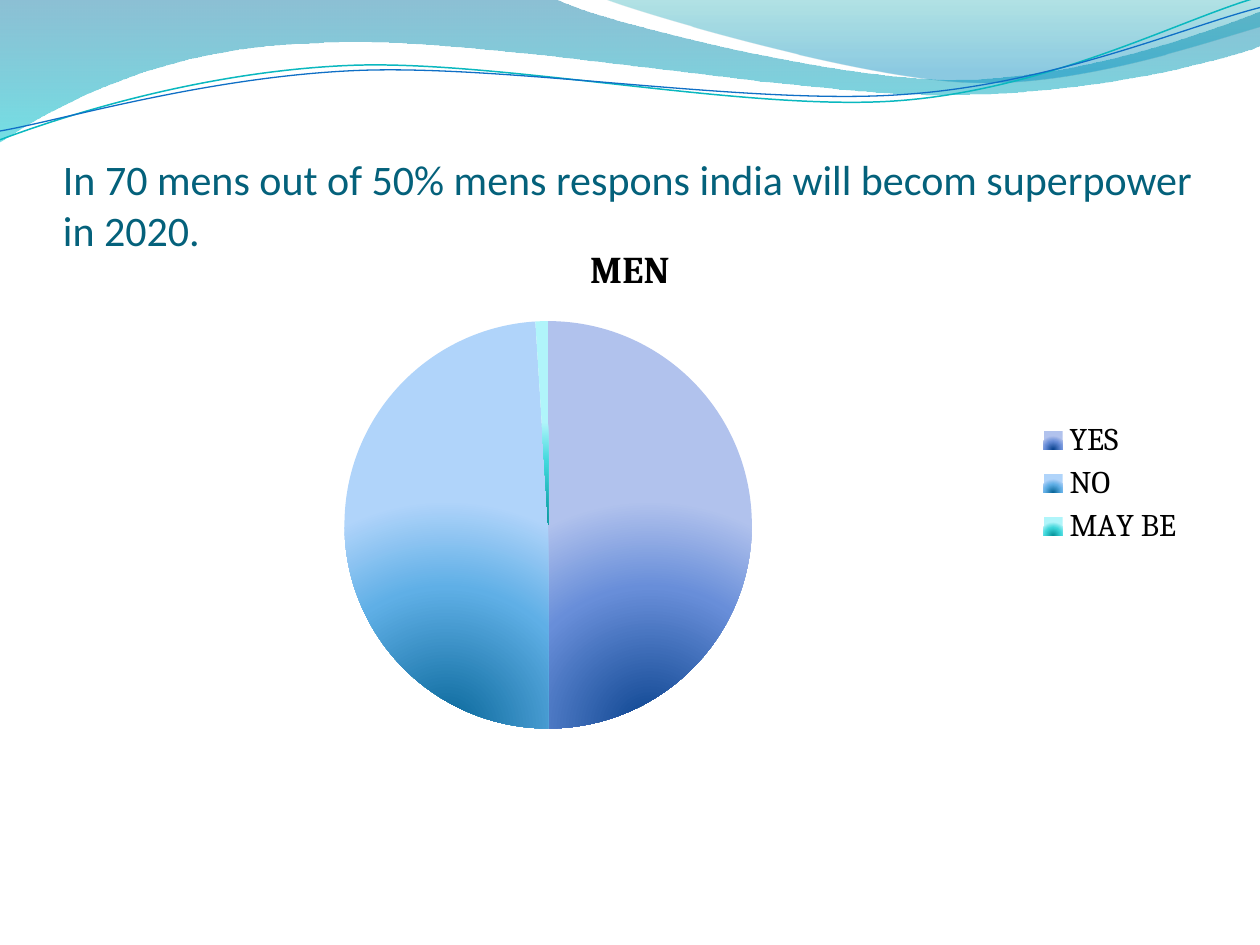
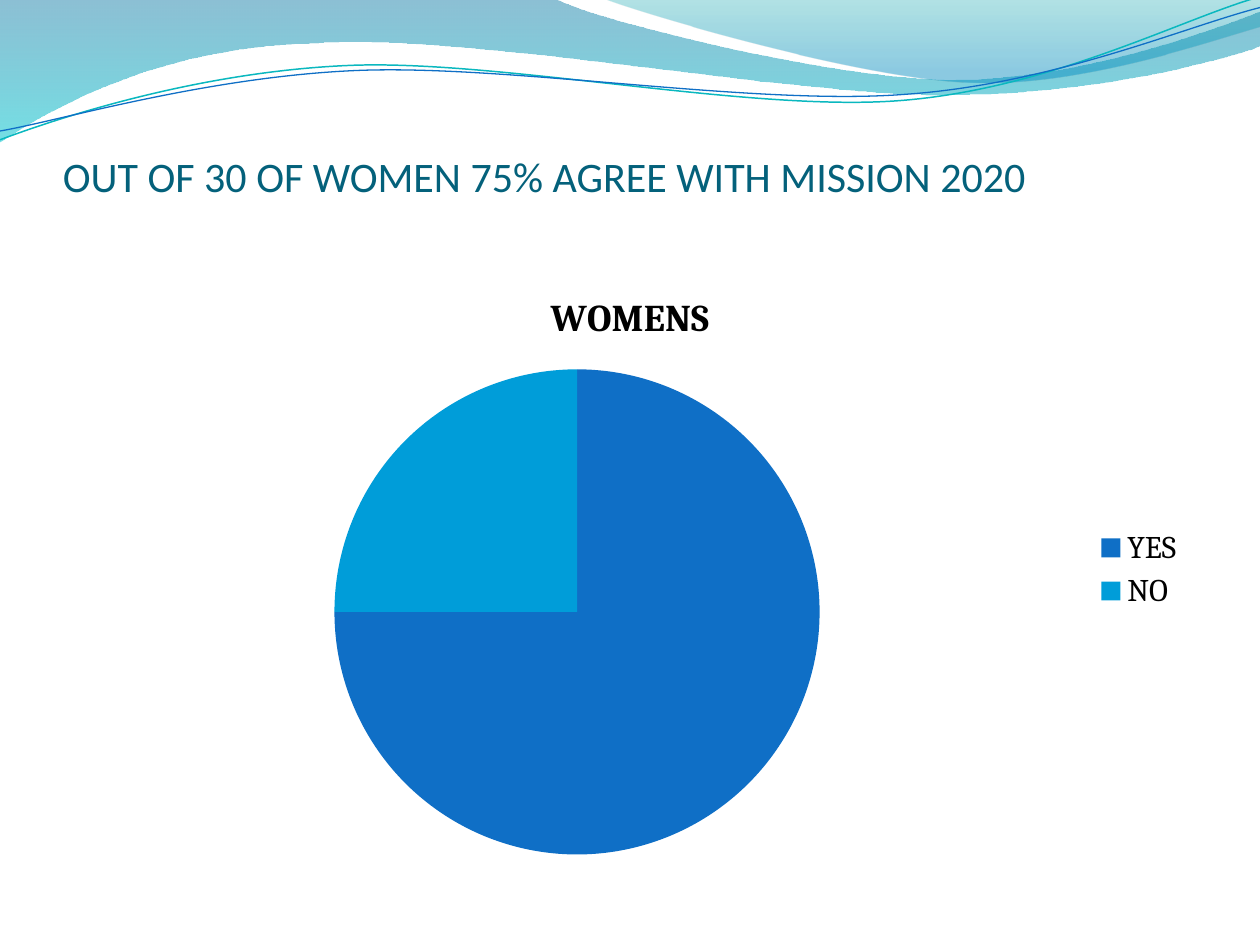
import pptx
import pptx.chart.data
import pptx.dml.color
import pptx.enum.chart
import pptx.enum.text
import pptx.oxml
import pptx.oxml.ns
import pptx.util
from lxml import etree

Inches = pptx.util.Inches
Pt = pptx.util.Pt
RGBColor = pptx.dml.color.RGBColor
qn = pptx.oxml.ns.qn

BLACK = RGBColor(0x00, 0x00, 0x00)
TITLE = RGBColor(0x04, 0x61, 0x7B)
BLUE = RGBColor(0x0F, 0x6F, 0xC6)
SKY = RGBColor(0x00, 0x9D, 0xD9)
TEAL_LINE = RGBColor(0x0A, 0xB8, 0xBF)
WAVE_TOP = RGBColor(0x00, 0x74, 0xA1)
WAVE_BOTTOM = RGBColor(0x00, 0xC6, 0xCF)
CREST_TOP = RGBColor(0x00, 0xA1, 0xA9)
CREST_BOTTOM = RGBColor(0x00, 0x8B, 0xBF)

# Slice shades from the glow centre outwards
BLUE_GLOW = (RGBColor(0x0A, 0x43, 0x8E), RGBColor(0x68, 0x8E, 0xD9), RGBColor(0xB1, 0xC2, 0xED))
SKY_GLOW = (RGBColor(0x08, 0x66, 0x99), RGBColor(0x5F, 0xAF, 0xE6), RGBColor(0xB0, 0xD4, 0xFA))
TEAL_GLOW = (RGBColor(0x08, 0x93, 0x9A), RGBColor(0x40, 0xD8, 0xDC), RGBColor(0xB0, 0xF5, 0xFA))
GLOW_STOPS = (0, 62, 100)

# Each segment holds one end point (line) or two controls and an end point (curve)
WAVE = ((0, 0), [
    [(4.4, -0.01)],
    [(4.76, 0.17), (6.64, 0.63), (7.58, 0.63)],
    [(8.53, 0.63), (9.58, 0.26), (10, 0.09)],
    [(10.01, 0.36)],
    [(9.83, 0.44), (8.7, 0.76), (7.46, 0.75)],
    [(6.22, 0.75), (3.82, 0.28), (2.57, 0.34)],
    [(1.29, 0.36), (0.46, 0.83), (-0.01, 1.13)],
    [(0, 0)]])
CREST = ((4.79, -0.01), [
    [(5.09, 0.11), (6.82, 0.62), (7.69, 0.65)],
    [(8.56, 0.69), (9.61, 0.32), (10, 0.21)],
    [(10, 0)],
    [(4.79, -0.01)]])
TEAL_CURVE = ((0, 1.11), [
    [(0.48, 0.93), (1.58, 0.57), (2.77, 0.52)],
    [(3.95, 0.47), (5.93, 0.89), (7.13, 0.8)],
    [(8.33, 0.71), (9.38, 0.15), (9.98, -0.02)]])
BLUE_CURVE = ((0, 1.04), [
    [(0.47, 0.96), (1.64, 0.61), (2.83, 0.56)],
    [(4.03, 0.51), (5.97, 0.84), (7.17, 0.75)],
    [(8.36, 0.67), (9.41, 0.21), (10, 0.06)]])


def bend(sp, segments):
    """Turn the straight steps of each three-point segment into one cubic curve."""
    steps = iter(sp._element.xpath(".//a:lnTo"))
    for segment in segments:
        lines = [next(steps) for _ in segment]
        if len(lines) == 3:
            curve = etree.Element(qn("a:cubicBezTo"))
            lines[0].addprevious(curve)
            for line in lines:
                curve.append(line[0])
                line.getparent().remove(line)


def glow_fill(shades):
    """Radial gradient centred on the bottom edge."""
    stops = "".join(
        f'<a:gs pos="{pos * 1000}"><a:srgbClr val="{shade}"/></a:gs>'
        for pos, shade in zip(GLOW_STOPS, shades))
    return pptx.oxml.parse_xml(
        f'<a:gradFill {pptx.oxml.ns.nsdecls("a")} rotWithShape="1"><a:gsLst>{stops}</a:gsLst>'
        '<a:path path="circle"><a:fillToRect l="50000" t="100000" r="50000" b="0"/></a:path>'
        '</a:gradFill>')


class Deck:
    def __init__(self):
        self.prs = pptx.Presentation()
        self.prs.slide_width = Inches(10)
        self.prs.slide_height = Inches(7.5)
        self.s = None

    def add_slide(self, title):
        self.s = self.prs.slides.add_slide(self.prs.slide_layouts[6])
        self.band(WAVE, (0, WAVE_TOP, 45), (100, WAVE_BOTTOM, 55))
        self.band(CREST, (0, CREST_TOP, 30), (80, CREST_BOTTOM, 45))
        self.curve(TEAL_CURVE, TEAL_LINE, 0.85)
        self.curve(BLUE_CURVE, BLUE, 0.75)
        self.title(title)

    def outline(self, figure, close):
        (x, y), segments = figure
        builder = self.s.shapes.build_freeform(Inches(x), Inches(y))
        builder.add_line_segments(
            [(Inches(px), Inches(py)) for segment in segments for px, py in segment], close=close)
        sp = builder.convert_to_shape()
        bend(sp, segments)
        sp.shadow.inherit = False
        return sp

    def band(self, figure, *stops):
        """Closed shape with a downward gradient; a stop is (percent, colour, opacity)."""
        sp = self.outline(figure, True)
        sp.line.fill.background()
        sp.fill.gradient()
        sp.fill.gradient_angle = 270
        for stop, (pos, color, opacity) in zip(sp.fill.gradient_stops, stops):
            stop.position = pos / 100
            stop.color.rgb = color
        for clr, (pos, color, opacity) in zip(sp._element.xpath(".//a:gs/a:srgbClr"), stops):
            etree.SubElement(clr, qn("a:alpha"), val=str(opacity * 1000))

    def curve(self, figure, color, width):
        sp = self.outline(figure, False)
        sp.fill.background()
        sp.line.color.rgb = color
        sp.line.width = Pt(width)

    def title(self, text):
        sp = self.s.shapes.add_textbox(Inches(0.5), Inches(0.77), Inches(9), Inches(1.25))
        tf = sp.text_frame
        tf.word_wrap = True
        tf.vertical_anchor = pptx.enum.text.MSO_ANCHOR.TOP
        tf.margin_left = tf.margin_right = tf.margin_bottom = 0
        tf.margin_top = Inches(0.45)
        r = tf.paragraphs[0].add_run()
        r.text = text
        self.style(r.font, 24, TITLE, "Calibri")

    def style(self, font, size, color=BLACK, name="Cambria", bold=False):
        font.size = Pt(size)
        font.color.rgb = color
        font.name = name
        font.bold = bold

    def pie(self, name, values, fills, top, height):
        """Pie of {category: value}; a fill is one colour or a tuple of glow shades."""
        data = pptx.chart.data.CategoryChartData()
        data.categories = list(values)
        data.add_series(name, list(values.values()))
        chart = self.s.shapes.add_chart(
            pptx.enum.chart.XL_CHART_TYPE.PIE,
            Inches(0.5), Inches(top), Inches(9), Inches(height), data).chart
        self.style(chart.font, 18)
        chart.has_title = True
        r = chart.chart_title.text_frame.paragraphs[0].add_run()
        r.text = name
        self.style(r.font, 21.6, bold=True)
        chart.has_legend = True
        chart.legend.position = pptx.enum.chart.XL_LEGEND_POSITION.RIGHT
        chart.legend.include_in_layout = False
        plot = chart.plots[0]
        plot.vary_by_categories = True
        series = plot.series[0]
        for i, fill in enumerate(fills):
            fmt = series.points[i].format
            fmt.line.fill.background()
            if isinstance(fill, RGBColor):
                fmt.fill.solid()
                fmt.fill.fore_color.rgb = fill
            else:
                sp_pr = series._element.xpath(f"c:dPt[c:idx/@val='{i}']/c:spPr")[0]
                sp_pr.insert(0, glow_fill(fill))


def main():
    deck = Deck()
    deck.add_slide("In 70 mens out of 50% mens respons india will becom superpower in 2020.")
    deck.pie("MEN", {"YES": 50, "NO": 49, "MAY BE": 1},
             (BLUE_GLOW, SKY_GLOW, TEAL_GLOW), 1.75, 4.17)
    deck.add_slide("OUT OF 30 OF WOMEN 75% AGREE WITH MISSION 2020")
    deck.pie("WOMENS", {"YES": 75, "NO": 25}, (BLUE, SKY), 2.12, 4.8)
    deck.prs.save("out.pptx")


if __name__ == "__main__":
    main()
